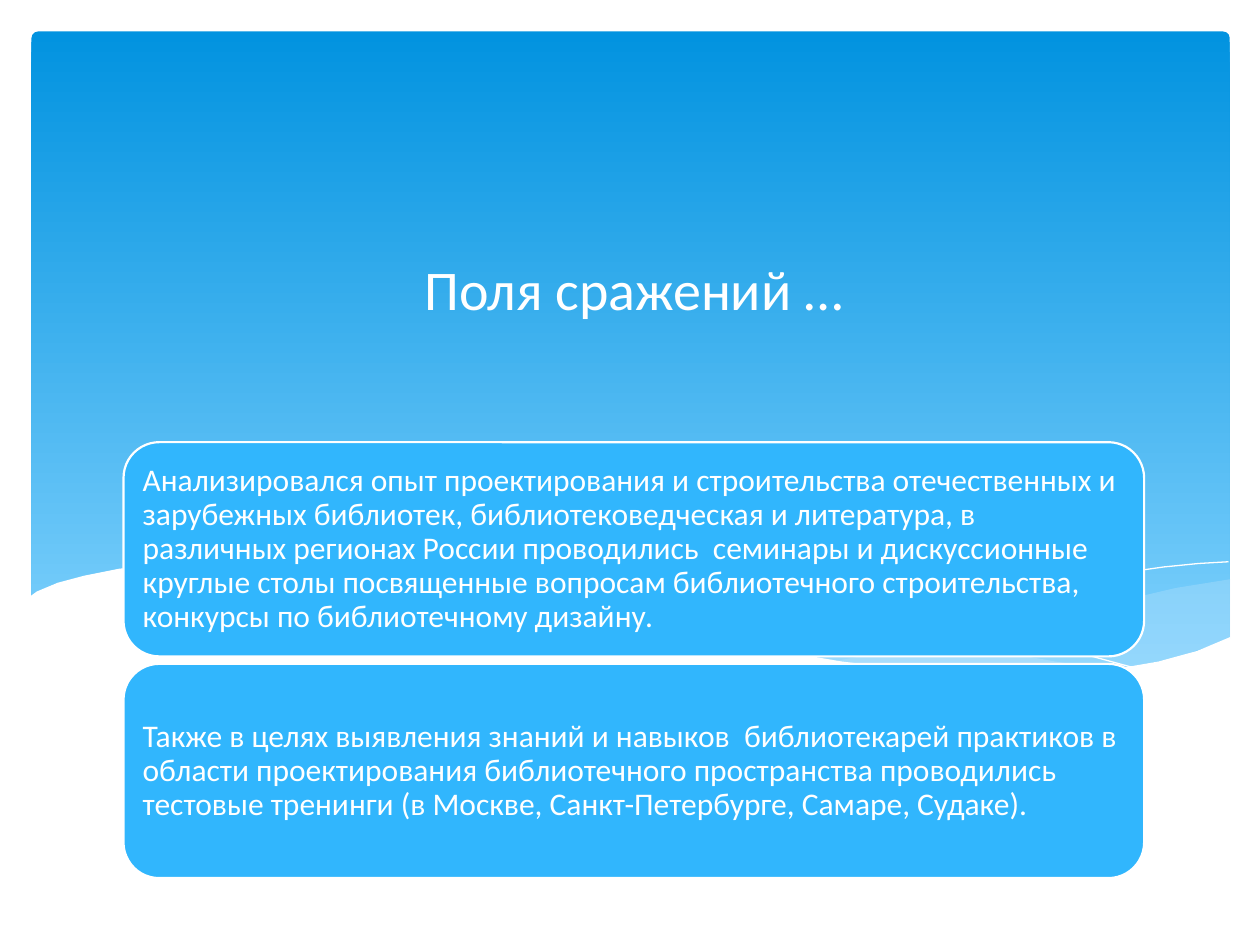
import pptx
import pptx.util
import pptx.dml.color
import pptx.enum.shapes
import pptx.enum.text
import lxml.etree
import pptx.oxml.ns

Pt = pptx.util.Pt
RGBColor = pptx.dml.color.RGBColor
ALIGN = pptx.enum.text.PP_ALIGN
ANCHOR = pptx.enum.text.MSO_ANCHOR
ROUND = pptx.enum.shapes.MSO_SHAPE.ROUNDED_RECTANGLE

WHITE = RGBColor(0xFF, 0xFF, 0xFF)
DEEP = RGBColor(0x02, 0x93, 0xE0)
LIGHT = RGBColor(0x83, 0xD3, 0xFE)
VEIL = RGBColor(0xC6, 0xE7, 0xFC)
CARD = RGBColor(0x31, 0xB6, 0xFD)

SHORT_VEIL = [
    (702.7, 331.2), (672.5, 336.2), (641.5, 342.7), (619.9, 347.8),
    (560.9, 362.2), (524.9, 369.4), (475.9, 378), (507.6, 382.3),
    (536.4, 385.2), (578.2, 387.4), (601.2, 386.6), (621.4, 385.2),
    (640.1, 383), (657.4, 379.4), (673.2, 375.8), (683.3, 372.2),
    (702.7, 365),
]
LONG_VEIL = [
    (643, 383.8), (602.6, 378), (558, 370.1), (508.3, 360), (452.9, 347),
    (420.5, 339.1), (389.5, 333.4), (361.4, 328.3), (334.8, 324.7),
    (302.4, 321.8), (273.6, 321.1), (247.7, 321.1), (225.4, 322.6),
    (205.9, 325.4), (232.6, 328.3), (260.6, 333.4), (290.9, 339.1),
    (323.3, 347), (381.6, 360.7), (420.5, 368.6), (456.5, 375.1),
    (489.6, 380.2), (519.8, 384.5), (547.9, 386.6), (581, 388.1),
    (610.6, 387.4), (630.7, 385.2),
]
LONG_CURVE = [
    (222.5, 328.3), (247.7, 324), (278.6, 322.6), (311.8, 321.8),
    (352.1, 324), (383.8, 326.9), (419, 331.2), (457.9, 337),
    (500.4, 344.9), (547.2, 355), (598.3, 367.9), (653, 383),
]
SHORT_CURVE = [
    (441.4, 372.2), (470.2, 364.3), (500.4, 357.1), (538.6, 347.8),
    (580.3, 338.4), (623.5, 330.5), (644.4, 326.9), (665.3, 324),
    (684.7, 321.8), (702, 321.1),
]
WAVE = [
    (703.4, 364.3), (684, 372.2), (662.4, 378), (638.6, 382.3),
    (612, 385.2), (582.5, 386.6), (560.2, 385.9), (522.7, 383),
    (481, 378), (434.2, 370.1), (380.9, 359.3), (321.8, 345.6),
    (281.5, 336.2), (244.8, 329.8), (210.2, 324.7), (180, 321.1),
    (151.9, 319.7), (127.4, 319.7), (105.1, 320.4), (85.7, 322.6),
    (68.4, 324.7), (48.2, 329), (33.1, 333.4), (20.9, 338.4),
    (16.6, 340.6), (16.6, 424.1), (703.4, 424.1),
]

TITLE = "Поля сражений …"
NOTES = [
    "Анализировался опыт проектирования и строительства отечественных и "
    "зарубежных библиотек, библиотековедческая и литература, в различных "
    "регионах России проводились  семинары и дискуссионные круглые столы "
    "посвященные вопросам библиотечного строительства, конкурсы по "
    "библиотечному дизайну.",
    "Также в целях выявления знаний и навыков  библиотекарей практиков в "
    "области проектирования библиотечного пространства проводились тестовые "
    "тренинги (в Москве, Санкт-Петербурге, Самаре, Судаке).",
]


def put_text(shape, text, size=18, align=ALIGN.LEFT, anchor=ANCHOR.MIDDLE,
             inset=5, before=0, after=0, line=1.0):
    frame = shape.text_frame
    frame.word_wrap = True
    frame.vertical_anchor = anchor
    frame.margin_left = frame.margin_right = Pt(inset)
    frame.margin_top = frame.margin_bottom = Pt(inset)
    para = frame.paragraphs[0]
    para.alignment = align
    para.space_before, para.space_after = Pt(before), Pt(after)
    para.line_spacing = line
    run = para.add_run()
    run.text = text
    run.font.name = "Calibri"
    run.font.size = Pt(size)
    run.font.color.rgb = WHITE


def add_sky(slide):
    sky = slide.shapes.add_shape(ROUND, Pt(18), Pt(18), Pt(684.7), Pt(373))
    sky.shadow.inherit = False
    sky.adjustments[0] = 0.01
    sky.line.fill.background()
    sky.fill.gradient()
    sky.fill.gradient_angle = 270
    for stop, place, color in zip(sky.fill.gradient_stops, (0, 1), (DEEP, LIGHT)):
        stop.position = place
        stop.color.rgb = color


def trace(slide, points, close):
    pen = slide.shapes.build_freeform(*points[0], scale=Pt(1))
    pen.add_line_segments(points[1:], close=close)
    shape = pen.convert_to_shape()
    shape.shadow.inherit = False
    return shape


def add_patch(slide, points, color, alpha=100):
    patch = trace(slide, points, True)
    patch.line.fill.background()
    patch.fill.solid()
    patch.fill.fore_color.rgb = color
    if alpha < 100:
        tint = patch.fill._xPr.find(".//" + pptx.oxml.ns.qn("a:srgbClr"))
        lxml.etree.SubElement(tint, pptx.oxml.ns.qn("a:alpha"), val=str(alpha * 1000))


def add_curve(slide, points):
    curve = trace(slide, points, False)
    curve.fill.background()
    curve.line.color.rgb = WHITE
    curve.line.width = Pt(0)


def add_card(slide, top, text):
    card = slide.shapes.add_shape(ROUND, Pt(70.6), Pt(top), Pt(583.2), Pt(122.4))
    card.shadow.inherit = False
    card.fill.solid()
    card.fill.fore_color.rgb = CARD
    card.line.color.rgb = WHITE
    card.line.width = Pt(1.25)
    put_text(card, text, after=6.3, line=0.9)


def main():
    deck = pptx.Presentation()
    deck.slide_width, deck.slide_height = Pt(720), Pt(540)
    slide = deck.slides.add_slide(deck.slide_layouts[6])
    add_sky(slide)
    add_patch(slide, SHORT_VEIL, VEIL, alpha=29)
    add_patch(slide, LONG_VEIL, VEIL, alpha=40)
    add_curve(slide, LONG_CURVE)
    add_curve(slide, SHORT_CURVE)
    add_patch(slide, WAVE, WHITE)
    title = slide.shapes.add_textbox(Pt(110.9), Pt(116.6), Pt(502.6), Pt(70.6))
    put_text(title, TITLE, size=32, align=ALIGN.CENTER, anchor=ANCHOR.BOTTOM,
             inset=3.6, before=6.4)
    for row, note in enumerate(NOTES):
        add_card(slide, 252.7 + row * 126.7, note)
    deck.save("out.pptx")


if __name__ == "__main__":
    main()
